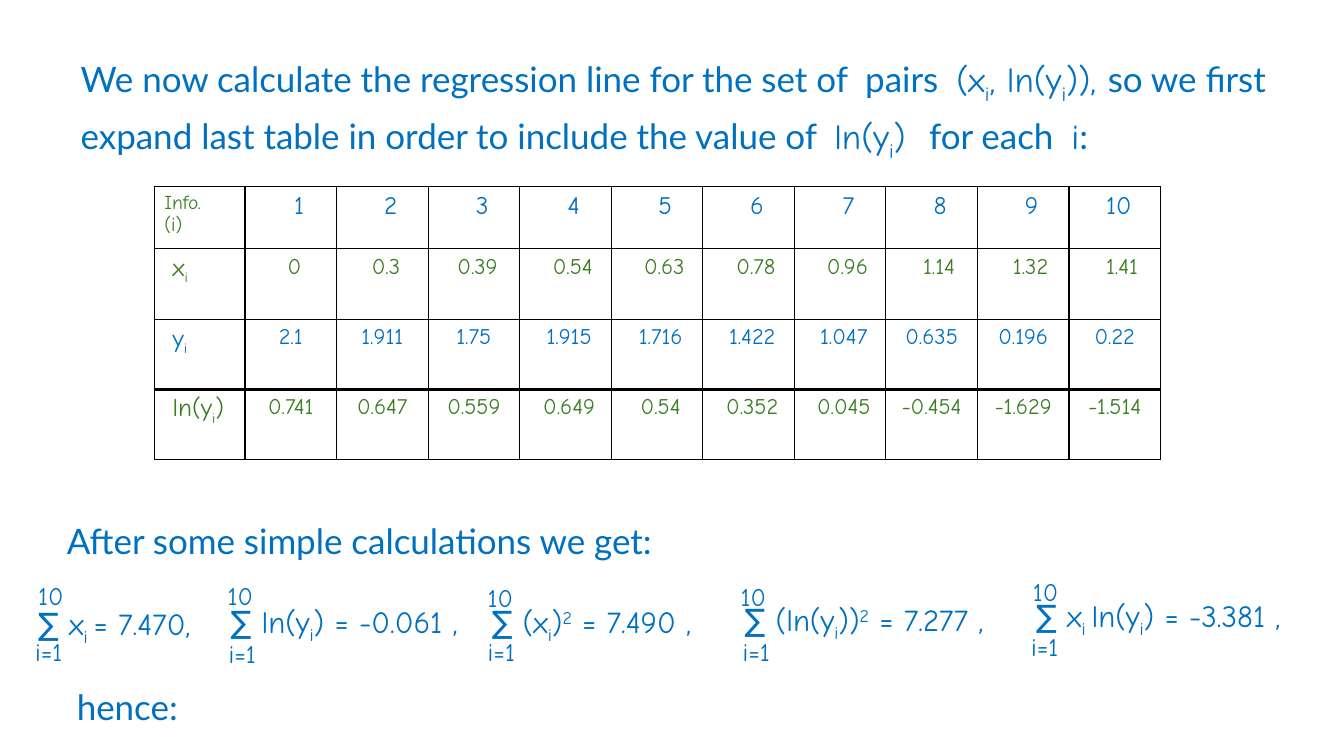
from lxml.etree import SubElement
from pptx import Presentation
from pptx.dml.color import RGBColor
from pptx.enum.text import MSO_ANCHOR, PP_ALIGN
from pptx.oxml.ns import qn
from pptx.util import Pt

BLUE = RGBColor(0x00, 0x70, 0xC0)
GREEN = RGBColor(0x3B, 0x7D, 0x23)
BLACK = RGBColor(0x00, 0x00, 0x00)
BODY_FONT = "Lato"
MATH_FONT = "Comic Neue"
SUBSCRIPT, SUPERSCRIPT = "-25000", "30000"

CELL_MARGIN = 7.2
SPACE_RATIO = 0.33  # width of one indent step relative to the font size
LABEL_WIDTH, VALUE_WIDTH = 64.8, 65.4
TABLE_LEFT = 110.2

INTRO = [
    [("We now calculate the regression line for the set of  pairs  ", BODY_FONT),
     ("(x[i], ln(y[i])), ", MATH_FONT), ("so we first", BODY_FONT)],
    [("expand last table in order to include the value of  ", BODY_FONT),
     ("ln(y[i])  ", MATH_FONT), ("for each  ", BODY_FONT),
     ("i", MATH_FONT), (":", BODY_FONT)],
]

# Row: label, label size, label indent, values, value size, value indents, colours, height
DATA_ROWS = [
    ("Info.\n(i)", 14, 0, [str(i) for i in range(1, 11)], 18, [2] * 9 + [1],
     (GREEN, BLUE), 44.6),
    ("x[i]", 18, 1,
     "0 0.3 0.39 0.54 0.63 0.78 0.96 1.14 1.32 1.41".split(), 16,
     [1] * 3 + [2] * 7, (GREEN, GREEN), 50.4),
    ("y[i]", 18, 1,
     "2.1 1.911 1.75 1.915 1.716 1.422 1.047 0.635 0.196 0.22".split(), 16,
     [0] * 3 + [1] * 4 + [0] * 3, (BLUE, BLUE), 50.4),
]
LOG_ROW = ("ln(y[i])", 18, 1,
           "0.741 0.647 0.559 0.649 0.54 0.352 0.045 -0.454 -1.629 -1.514".split(), 16,
           [0] * 3 + [1] * 4 + [0] * 3, (GREEN, GREEN), 50.4)

# Sum: formula, its position, position of the upper limit, position of the lower limit
SUMS = [
    ("∑ x[i ]= 7.470,", (20.2, 428.4), (20.2, 411.1), (18, 450.7)),
    ("∑ ln(y[i]) = -0.061 ,", (157.7, 427), (155.5, 411.1), (156.2, 452.2)),
    ("∑ (x[i])[2] = 7.490 ,", (344.2, 427), (341.3, 412.6), (341.3, 450.7)),
    ("∑ (ln(y[i]))[2] = 7.277 ,", (524.9, 425.5), (522, 411.8), (523.4, 450.7)),
    ("∑ x[i ]ln(y[i]) = -3.381 ,", (733, 422.6), (730.8, 408.2), (729.4, 447.1)),
]


def style_font(font, size, color, name):
    font.size = Pt(size)
    font.color.rgb = color
    font.name = name


def add_math_runs(paragraph, text, font_name=None):
    """Add text whose [bracketed] parts are scripts: digits raised, letters lowered."""
    for index, part in enumerate(text.replace("]", "[").split("[")):
        if not part:
            continue
        run = paragraph.add_run()
        run.text = part
        if font_name:
            run.font.name = font_name
        if index % 2:
            offset = SUPERSCRIPT if part.isdigit() else SUBSCRIPT
            run._r.get_or_add_rPr().set("baseline", offset)


def add_text_frame(slide, left, top, width, height, wrap=True):
    text_frame = slide.shapes.add_textbox(Pt(left), Pt(top), Pt(width), Pt(height)).text_frame
    text_frame.word_wrap = wrap
    return text_frame


def add_statement(slide, left, top, width, height, lines, line_spacing):
    """Add body text; every line is a list of (text, font name) pieces."""
    text_frame = add_text_frame(slide, left, top, width, height)
    for index, pieces in enumerate(lines):
        paragraph = text_frame.add_paragraph() if index else text_frame.paragraphs[0]
        paragraph.line_spacing = line_spacing
        paragraph.space_before = Pt(10)
        style_font(paragraph.font, 25, BLUE, BODY_FONT)
        for text, font_name in pieces:
            add_math_runs(paragraph, text, font_name)


def add_math(slide, text, position, width, size, wrap):
    text_frame = add_text_frame(slide, *position, width, size * 1.2 + 7.2, wrap)
    paragraph = text_frame.paragraphs[0]
    style_font(paragraph.font, size, BLUE, MATH_FONT)
    add_math_runs(paragraph, text)


def add_sum(slide, formula, position, upper, lower):
    add_math(slide, "10", upper, 33.8, 18, wrap=False)
    add_math(slide, formula, position, 225, 22, wrap=True)
    add_math(slide, "i=1", lower, 38.2, 18, wrap=False)


def set_borders(cell):
    properties = cell._tc.get_or_add_tcPr()
    for index, side in enumerate(("a:lnL", "a:lnR", "a:lnT", "a:lnB")):
        line = properties.makeelement(qn(side), {"w": str(Pt(1))})
        fill = SubElement(line, qn("a:solidFill"))
        SubElement(fill, qn("a:srgbClr"), val=str(BLACK))
        properties.insert(index, line)


def fill_cell(cell, text, size, color, indent, alignment):
    cell.fill.background()
    set_borders(cell)
    cell.vertical_anchor = MSO_ANCHOR.TOP
    cell.margin_left = Pt(CELL_MARGIN + indent * SPACE_RATIO * size)
    for index, line in enumerate(text.split("\n")):
        paragraph = cell.text_frame.add_paragraph() if index else cell.text_frame.paragraphs[0]
        paragraph.alignment = alignment
        style_font(paragraph.font, size, color, MATH_FONT)
        add_math_runs(paragraph, line)


def add_data_table(slide, top, rows):
    column_count = len(rows[0][3]) + 1
    width = LABEL_WIDTH + VALUE_WIDTH * (column_count - 1)
    height = sum(row[-1] for row in rows)
    table = slide.shapes.add_table(len(rows), column_count, Pt(TABLE_LEFT), Pt(top),
                                   Pt(width), Pt(height)).table
    table.first_row = table.horz_banding = False
    for index, column in enumerate(table.columns):
        column.width = Pt(VALUE_WIDTH if index else LABEL_WIDTH)
    for row_index, row in enumerate(rows):
        label, label_size, label_indent, values, size, indents, colors, row_height = row
        table.rows[row_index].height = Pt(row_height)
        fill_cell(table.cell(row_index, 0), label, label_size, colors[0],
                  label_indent, PP_ALIGN.LEFT)
        for column_index, (value, indent) in enumerate(zip(values, indents), start=1):
            fill_cell(table.cell(row_index, column_index), value, size, colors[1],
                      indent, PP_ALIGN.CENTER)


def main():
    presentation = Presentation()
    presentation.slide_width, presentation.slide_height = Pt(960), Pt(540)
    slide = presentation.slides.add_slide(presentation.slide_layouts[6])

    add_statement(slide, 50.6, 38.2, 909, 90, INTRO, 0.9)
    add_data_table(slide, 133.2, DATA_ROWS)
    add_data_table(slide, 277.9, [LOG_ROW])
    add_statement(slide, 40.7, 373, 900, 36,
                  [[("After some simple calculations we get:", BODY_FONT)]], 0.8)
    for sum_parts in SUMS:
        add_sum(slide, *sum_parts)
    add_statement(slide, 47.8, 494.6, 900, 41, [[("hence:", BODY_FONT)]], 0.7)

    presentation.save("out.pptx")


if __name__ == "__main__":
    main()
